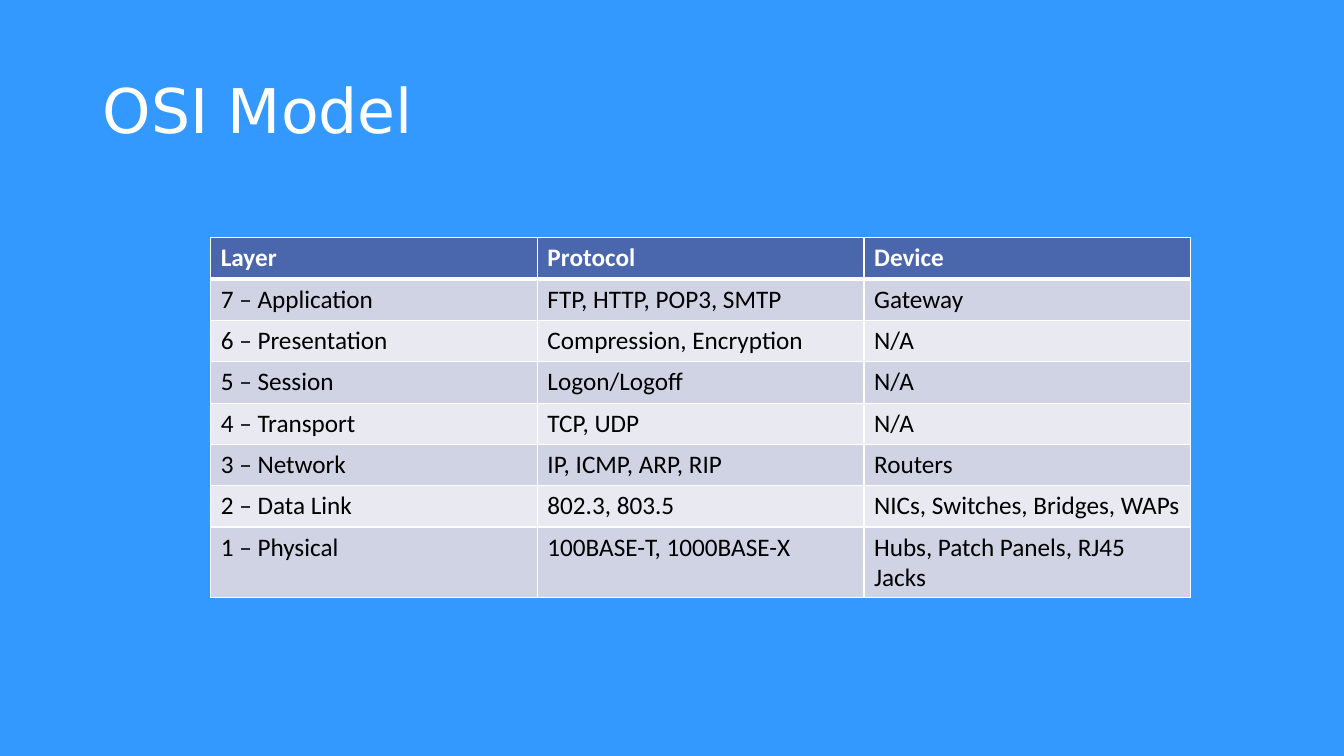
from lxml.etree import SubElement
from pptx import Presentation
from pptx.dml.color import RGBColor
from pptx.enum.text import MSO_ANCHOR
from pptx.oxml.ns import qn
from pptx.util import Inches, Pt

COLORS = {
    "background": "3399FF",
    "white": "FFFFFF",
    "black": "000000",
    "header": "4A66AC",
    "odd_row": "D0D3E3",
    "even_row": "E9EAF1",
}

OSI_LAYERS = [
    ("Layer", "Protocol", "Device"),
    ("7 – Application", "FTP, HTTP, POP3, SMTP", "Gateway"),
    ("6 – Presentation", "Compression, Encryption", "N/A"),
    ("5 – Session", "Logon/Logoff", "N/A"),
    ("4 – Transport", "TCP, UDP", "N/A"),
    ("3 – Network", "IP, ICMP, ARP, RIP", "Routers"),
    ("2 – Data Link", "802.3, 803.5", "NICs, Switches, Bridges, WAPs"),
    ("1 – Physical", "100BASE-T, 1000BASE-X", "Hubs, Patch Panels, RJ45 Jacks"),
]


class SlideBuilder:
    """Draws styled elements on one slide."""

    title_font = "DejaVu Sans"
    body_font = "Calibri"

    def __init__(self, presentation):
        self.slide = presentation.slides.add_slide(presentation.slide_layouts[6])
        self.fill(self.slide.background, "background")

    def fill(self, target, color):
        target.fill.solid()
        target.fill.fore_color.rgb = RGBColor.from_string(COLORS[color])

    def format_text(self, paragraph, name, size, color, bold=False):
        for run in paragraph.runs:
            run.font.name = name
            run.font.size = Pt(size)
            run.font.bold = bold
            run.font.color.rgb = RGBColor.from_string(COLORS[color])

    def title(self, text, left, top, width, height):
        shape = self.slide.shapes.add_textbox(
            Inches(left), Inches(top), Inches(width), Inches(height))
        text_frame = shape.text_frame
        text_frame.word_wrap = True
        text_frame.vertical_anchor = MSO_ANCHOR.MIDDLE
        text_frame.text = text
        paragraph = text_frame.paragraphs[0]
        paragraph.line_spacing = 0.9
        self.format_text(paragraph, self.title_font, 44, "white")

    def borders(self, cell, top, bottom):
        properties = cell._tc.get_or_add_tcPr()
        for side, width in (("L", 1), ("R", 1), ("T", top), ("B", bottom)):
            line = SubElement(properties, qn(f"a:ln{side}"), w=str(Pt(width)))
            solid = SubElement(line, qn("a:solidFill"))
            SubElement(solid, qn("a:srgbClr"), val=COLORS["white"])

    def table(self, rows, left, top, column_width, row_height):
        column_count = len(rows[0])
        table = self.slide.shapes.add_table(
            len(rows), column_count, Inches(left), Inches(top),
            Inches(column_width * column_count),
            Inches(row_height * len(rows))).table
        for column in table.columns:
            column.width = Inches(column_width)
        for row_index, values in enumerate(rows):
            table.rows[row_index].height = Inches(row_height)
            is_header = row_index == 0
            row_color = "odd_row" if row_index % 2 else "even_row"
            for column_index, value in enumerate(values):
                cell = table.cell(row_index, column_index)
                cell.text_frame.text = value
                self.format_text(cell.text_frame.paragraphs[0], self.body_font, 18,
                                 "white" if is_header else "black", is_header)
                self.borders(cell, top=3 if row_index == 1 else 1,
                             bottom=3 if is_header else 1)
                self.fill(cell, "header" if is_header else row_color)


def main():
    presentation = Presentation()
    presentation.slide_width = Inches(13.33)
    presentation.slide_height = Inches(7.5)
    builder = SlideBuilder(presentation)
    builder.title("OSI Model", 0.92, 0.4, 11.5, 1.45)
    builder.table(OSI_LAYERS, 2.09, 2.36, column_width=3.24, row_height=0.41)
    presentation.save("out.pptx")


if __name__ == "__main__":
    main()
